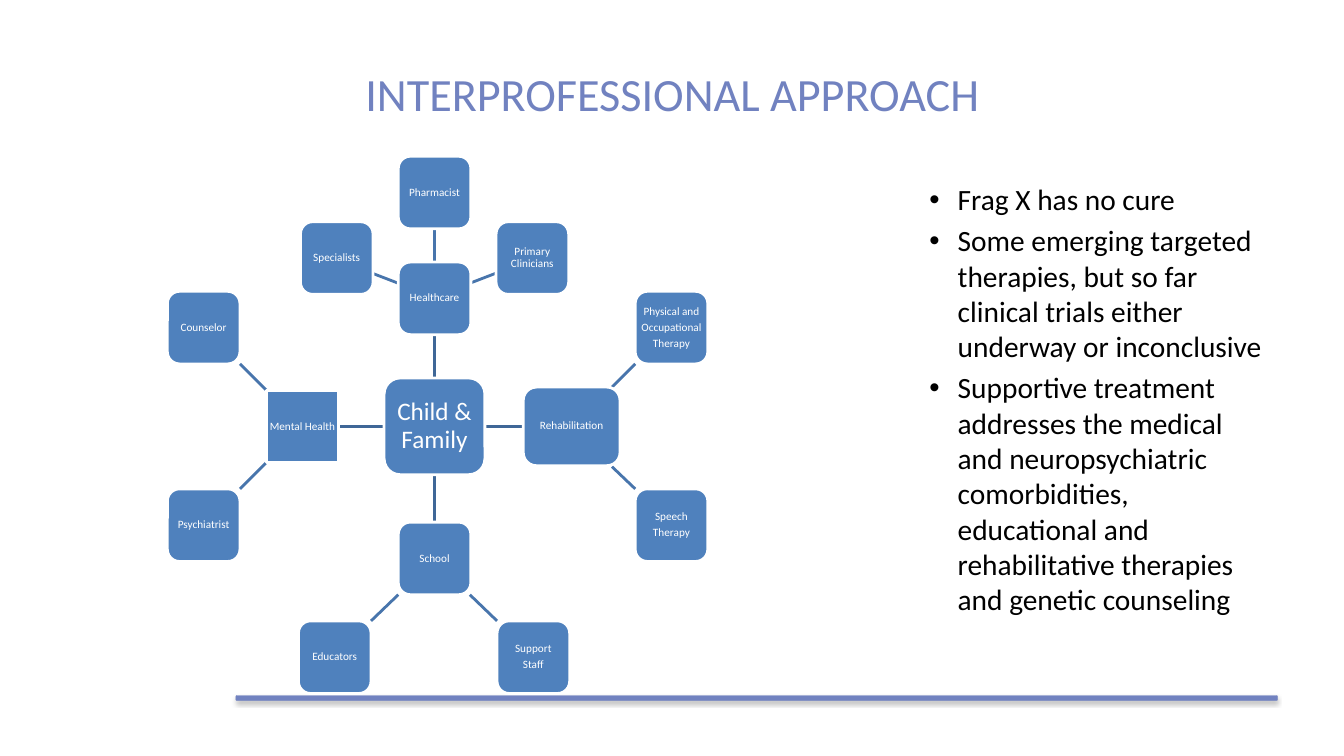
from lxml import etree
from pptx import Presentation
from pptx import util as u
from pptx.dml.color import RGBColor
from pptx.enum import shapes, text
from pptx.oxml import ns

PX = 9144  # one px is a hundredth of an inch
PERIWINKLE = RGBColor(0x71, 0x82, 0xC0)
NODE_BLUE = RGBColor(0x4F, 0x81, 0xBD)
SPOKE_BLUE = RGBColor(0x3F, 0x67, 0x97)
BRANCH_BLUE = RGBColor(0x48, 0x75, 0xAC)
WHITE = RGBColor(0xFF, 0xFF, 0xFF)
BLACK = RGBColor(0, 0, 0)
TOP, LEFT, BOTTOM, RIGHT = range(4)
ROUNDED = shapes.MSO_SHAPE.ROUNDED_RECTANGLE


def px(*lengths):
    return [u.Emu(length * PX) for length in lengths]


def add_run(paragraph, words, size, color):
    run = paragraph.add_run()
    run.text = words
    run.font.name = "Calibri"
    run.font.size = u.Pt(size)
    run.font.color.rgb = color


presentation = Presentation()
presentation.slide_width, presentation.slide_height = px(1333, 750)
slide = presentation.slides.add_slide(presentation.slide_layouts[5])

# Footer bar with a soft shadow
bar = slide.shapes.add_shape(ROUNDED, *px(234, 690, 1033, 5))
bar.shadow.inherit = False
bar.fill.solid()
bar.fill.fore_color.rgb = PERIWINKLE
bar.line.color.rgb = PERIWINKLE
bar.line.width = u.Pt(0.25)
effects = bar._element.spPr.find(ns.qn("a:effectLst"))
shadow = etree.SubElement(effects, ns.qn("a:outerShdw"), blurRad=str(u.Pt(3.1)),
                          dist=str(u.Pt(1.8)), dir="5400000", rotWithShape="0")
shadow_color = etree.SubElement(shadow, ns.qn("a:srgbClr"), val="000000")
etree.SubElement(shadow_color, ns.qn("a:alpha"), val="35000")

# Title
title = slide.shapes.title
title.left, title.top, title.width, title.height = px(67, 30, 1200, 125)
title.text_frame.vertical_anchor = text.MSO_ANCHOR.MIDDLE
title.text_frame.paragraphs[0].alignment = text.PP_ALIGN.CENTER
add_run(title.text_frame.paragraphs[0], "INTERPROFESSIONAL APPROACH", 33, PERIWINKLE)

# Links of the care network: ends, then the joined nodes and sides
links = [
    ((481, 423, 519, 423), SPOKE_BLUE, ("Child & Family", RIGHT, "Rehabilitation", LEFT)),
    ((431, 471, 431, 518), SPOKE_BLUE, ("Child & Family", BOTTOM, "School", TOP)),
    ((381, 423, 336, 423), SPOKE_BLUE, ("Child & Family", LEFT, "Mental Health", RIGHT)),
    ((431, 375, 431, 332), SPOKE_BLUE, ("Child & Family", TOP, "Healthcare", BOTTOM)),
    ((431, 260, 431, 227), BRANCH_BLUE, ("Healthcare", TOP, "Pharmacist", BOTTOM)),
    ((466, 281, 492, 271), BRANCH_BLUE, None),
    ((395, 281, 369, 271), BRANCH_BLUE, None),
    ((264, 387, 238, 361), BRANCH_BLUE, None),
    ((264, 459, 238, 485), BRANCH_BLUE, None),
    ((395, 590, 368, 616), BRANCH_BLUE, None),
    ((466, 590, 493, 616), BRANCH_BLUE, None),
    ((607, 463, 630, 485), BRANCH_BLUE, None),
    ((607, 384, 630, 361), BRANCH_BLUE, None),
]
joints = []
for ends, color, joint in links:
    connector = slide.shapes.add_connector(shapes.MSO_CONNECTOR.STRAIGHT, *px(*ends))
    connector.line.color.rgb = color
    connector.line.width = u.Pt(2)
    etree.SubElement(connector._element.spPr, ns.qn("a:effectLst"))
    if joint:
        joints.append((connector, joint))

# Nodes: label, left, top, width, height; most are squares of one size
SIDE = 72
nodes = [
    ("Child & Family", 381, 375, 100, 96),
    ("Healthcare", 395, 260, SIDE, SIDE),
    ("Primary Clinicians", 492, 220, SIDE, SIDE),
    ("Pharmacist", 395, 155, SIDE, SIDE),
    ("Specialists", 298, 220, SIDE, SIDE),
    ("Mental Health", 264, 387, SIDE, SIDE),
    ("Counselor", 166, 289, SIDE, SIDE),
    ("Psychiatrist", 166, 485, SIDE, SIDE),
    ("School", 395, 518, SIDE, SIDE),
    ("Educators", 296, 616, SIDE, SIDE),
    ("Support\nStaff", 493, 616, SIDE, SIDE),
    ("Rehabilitation", 519, 384, 96, 78),
    ("Speech\nTherapy", 630, 485, SIDE, SIDE),
    ("Physical and\nOccupational\nTherapy", 630, 289, SIDE, SIDE),
]
node_shapes = {}
for label, *box in nodes:
    is_hub = label == "Child & Family"
    outline = shapes.MSO_SHAPE.RECTANGLE if label == "Mental Health" else ROUNDED
    node = slide.shapes.add_shape(outline, *px(*box))
    node_shapes[label] = node
    node.shadow.inherit = False
    node.fill.solid()
    node.fill.fore_color.rgb = NODE_BLUE
    node.line.color.rgb = WHITE
    node.line.width = u.Pt(2)
    frame = node.text_frame
    frame.word_wrap = True
    frame.vertical_anchor = text.MSO_ANCHOR.MIDDLE
    inset = u.Emu((5 if is_hub else 2) * PX)
    frame.margin_left = frame.margin_right = inset
    frame.margin_top = frame.margin_bottom = inset
    for index, words in enumerate(label.split("\n")):
        paragraph = frame.add_paragraph() if index else frame.paragraphs[0]
        paragraph.alignment = text.PP_ALIGN.CENTER
        paragraph.line_spacing = 0.9
        paragraph.space_after = u.Pt(2.8)
        add_run(paragraph, words, 18 if is_hub else 8, WHITE)

for connector, (start, start_side, end, end_side) in joints:
    connector.begin_connect(node_shapes[start], start_side)
    connector.end_connect(node_shapes[end], end_side)

# Bulleted notes
notes = [
    "Frag X has no cure",
    "Some emerging targeted therapies, but so far clinical trials either "
    "underway or inconclusive",
    "Supportive treatment addresses the medical and neuropsychiatric comorbidities, "
    "educational and rehabilitative therapies and genetic counseling",
]
notes_frame = slide.shapes.add_textbox(*px(912, 175, 355, 495)).text_frame
notes_frame.word_wrap = True
for index, note in enumerate(notes):
    paragraph = notes_frame.add_paragraph() if index else notes_frame.paragraphs[0]
    properties = paragraph._p.get_or_add_pPr()
    properties.set("marL", str(28 * PX))
    properties.set("indent", str(-28 * PX))
    etree.SubElement(properties, ns.qn("a:buFont"), typeface="Arial")
    etree.SubElement(properties, ns.qn("a:buChar"), char="•")
    if index:
        paragraph.space_before = u.Pt(4.2)
    add_run(paragraph, note, 21, BLACK)

presentation.save("out.pptx")
